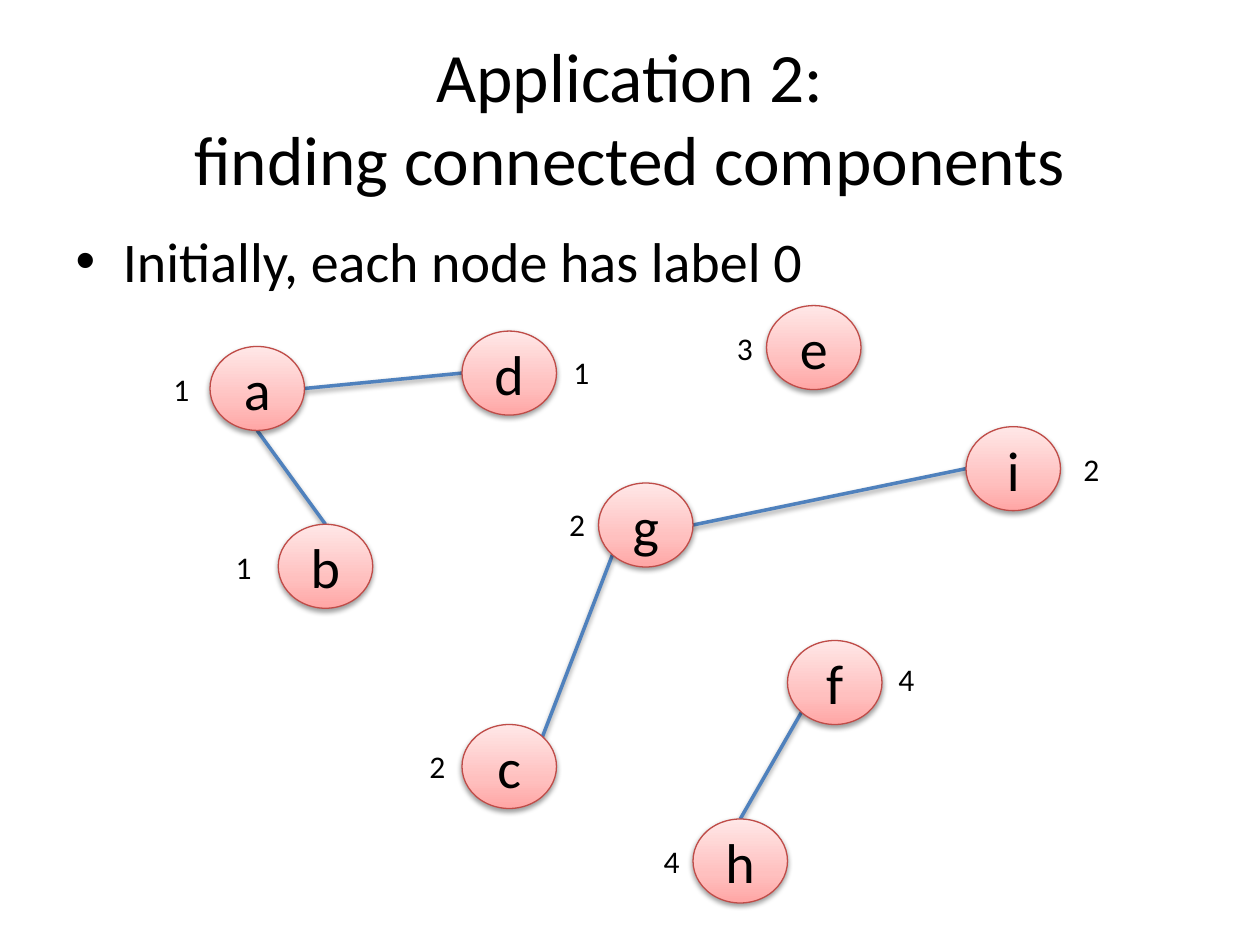
from pptx import Presentation
from pptx.dml.color import RGBColor
from pptx.enum.shapes import MSO_CONNECTOR, MSO_SHAPE
from pptx.enum.text import MSO_ANCHOR, MSO_AUTO_SIZE, PP_ALIGN
from pptx.oxml import parse_xml
from pptx.oxml.ns import nsdecls
from pptx.util import Pt

BLACK = RGBColor(0x00, 0x00, 0x00)
EDGE_BLUE = RGBColor(0x4F, 0x81, 0xBD)
NODE_OUTLINE = RGBColor(0xBF, 0x4C, 0x48)
NODE_STOPS = (
    (0, RGBColor(0xFF, 0xA6, 0xA5)),
    (35, RGBColor(0xFF, 0xC0, 0xBF)),
    (100, RGBColor(0xFF, 0xE7, 0xE7)),
)

NODE_W, NODE_H = 54, 48
LABEL_W, LABEL_H = 24, 29

# Node: left, top, then the left and top of its component label
NODES = {
    "a": (120, 198, "1", 92, 208),
    "b": (159, 299.6, "1", 127.5, 309.6),
    "d": (264, 189.2, "1", 320.5, 198),
    "c": (264, 414, "2", 238.3, 423.4),
    "g": (342, 276, "2", 318.2, 285.2),
    "e": (438, 174.6, "3", 414, 184.3),
    "i": (552, 243.8, "2", 612, 253.4),
    "f": (450, 366, "4", 506.2, 373.7),
    "h": (396, 468, "4", 372.2, 477.4),
}

# Points on the rim of a node, as fractions of its width and height
RIM = {
    "top": (0.5, 0), "bottom": (0.5, 1), "left": (0, 0.5), "right": (1, 0.5),
    "top right": (0.85, 0.15), "bottom left": (0.15, 0.85),
}
EDGES = (
    ("a", "bottom", "b", "top"),
    ("a", "right", "d", "left"),
    ("c", "top right", "g", "bottom left"),
    ("g", "right", "i", "left"),
    ("f", "bottom left", "h", "top"),
)


def write_text(frame, text, *, size, align=PP_ALIGN.LEFT, anchor=MSO_ANCHOR.TOP,
               wrap=True, fit=MSO_AUTO_SIZE.NONE, font="Calibri", color=BLACK):
    frame.word_wrap = wrap
    frame.auto_size = fit
    frame.vertical_anchor = anchor
    paragraph = frame.paragraphs[0]
    paragraph.text = text
    paragraph.alignment = align
    for run in paragraph.runs:
        run.font.name = font
        run.font.size = Pt(size)
        run.font.color.rgb = color


def rim_point(node, side):
    left, top = NODES[node][:2]
    across, down = RIM[side]
    return Pt(left + across * NODE_W), Pt(top + down * NODE_H)


class GraphSlide:
    def __init__(self, slide):
        self.slide = slide
        self.shapes = slide.shapes

    def placeholder(self, holder, box, text, **style):
        holder.left, holder.top, holder.width, holder.height = map(Pt, box)
        write_text(holder.text_frame, text, **style)

    def cast_shadow(self, element):
        element._element.spPr.append(parse_xml(
            f'<a:effectLst {nsdecls("a")}>'
            f'<a:outerShdw blurRad="{Pt(3.1)}" dist="{Pt(1.6)}" dir="5400000" rotWithShape="0">'
            '<a:srgbClr val="000000"><a:alpha val="38000"/></a:srgbClr>'
            '</a:outerShdw></a:effectLst>'))

    def edge(self, start, start_side, end, end_side):
        link = self.shapes.add_connector(
            MSO_CONNECTOR.STRAIGHT, *rim_point(start, start_side), *rim_point(end, end_side))
        link.line.color.rgb = EDGE_BLUE
        link.line.width = Pt(2)
        self.cast_shadow(link)

    def node(self, name, left, top):
        circle = self.shapes.add_shape(
            MSO_SHAPE.OVAL, Pt(left), Pt(top), Pt(NODE_W), Pt(NODE_H))
        circle.line.color.rgb = NODE_OUTLINE
        circle.line.width = Pt(0.75)
        # Three-stop gradient, placed right after the geometry
        stops = "".join(
            f'<a:gs pos="{position * 1000}"><a:srgbClr val="{color}"/></a:gs>'
            for position, color in NODE_STOPS)
        circle._element.spPr.insert(2, parse_xml(
            f'<a:gradFill {nsdecls("a")} rotWithShape="1"><a:gsLst>{stops}</a:gsLst>'
            '<a:lin ang="16200000" scaled="0"/></a:gradFill>'))
        self.cast_shadow(circle)
        write_text(circle.text_frame, name, size=32, align=PP_ALIGN.CENTER,
                   anchor=MSO_ANCHOR.MIDDLE)

    def label(self, text, left, top):
        box = self.shapes.add_textbox(Pt(left), Pt(top), Pt(LABEL_W), Pt(LABEL_H))
        write_text(box.text_frame, text, size=18, wrap=False,
                   fit=MSO_AUTO_SIZE.SHAPE_TO_FIT_TEXT)


def main():
    deck = Presentation()
    deck.slide_width, deck.slide_height = Pt(720), Pt(540)
    graph = GraphSlide(deck.slides.add_slide(deck.slide_layouts[1]))

    # Heading and bullet
    heading, bullet = graph.slide.placeholders
    graph.placeholder(heading, (36, 21.6, 648, 90),
                      "Application 2:\vfinding connected components",
                      size=39.6, align=PP_ALIGN.CENTER, anchor=MSO_ANCHOR.MIDDLE)
    graph.placeholder(bullet, (36, 126, 648, 356.4),
                      "Initially, each node has label 0", size=32)

    # Graph: edges behind nodes, labels on top
    for edge in EDGES:
        graph.edge(*edge)
    for name, (left, top, *_) in NODES.items():
        graph.node(name, left, top)
    for _, _, component, left, top in NODES.values():
        graph.label(component, left, top)

    deck.save("out.pptx")


if __name__ == "__main__":
    main()
